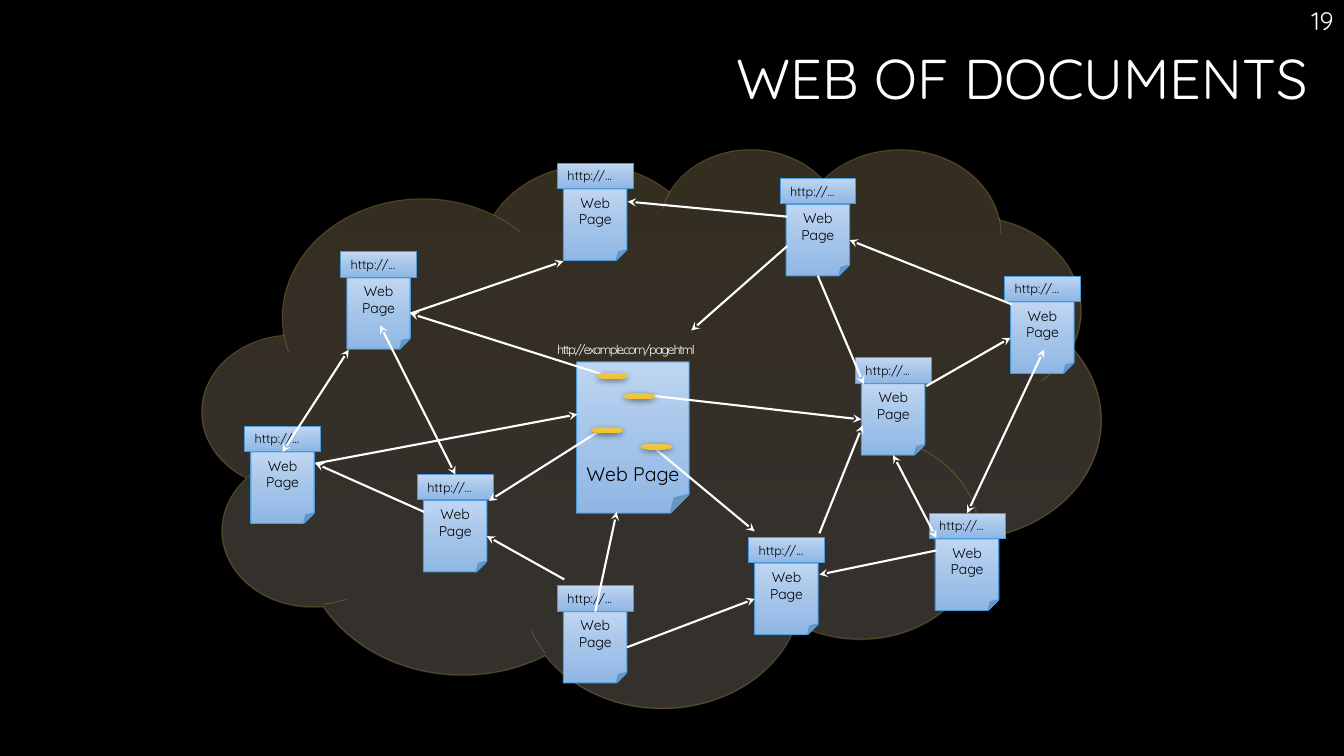
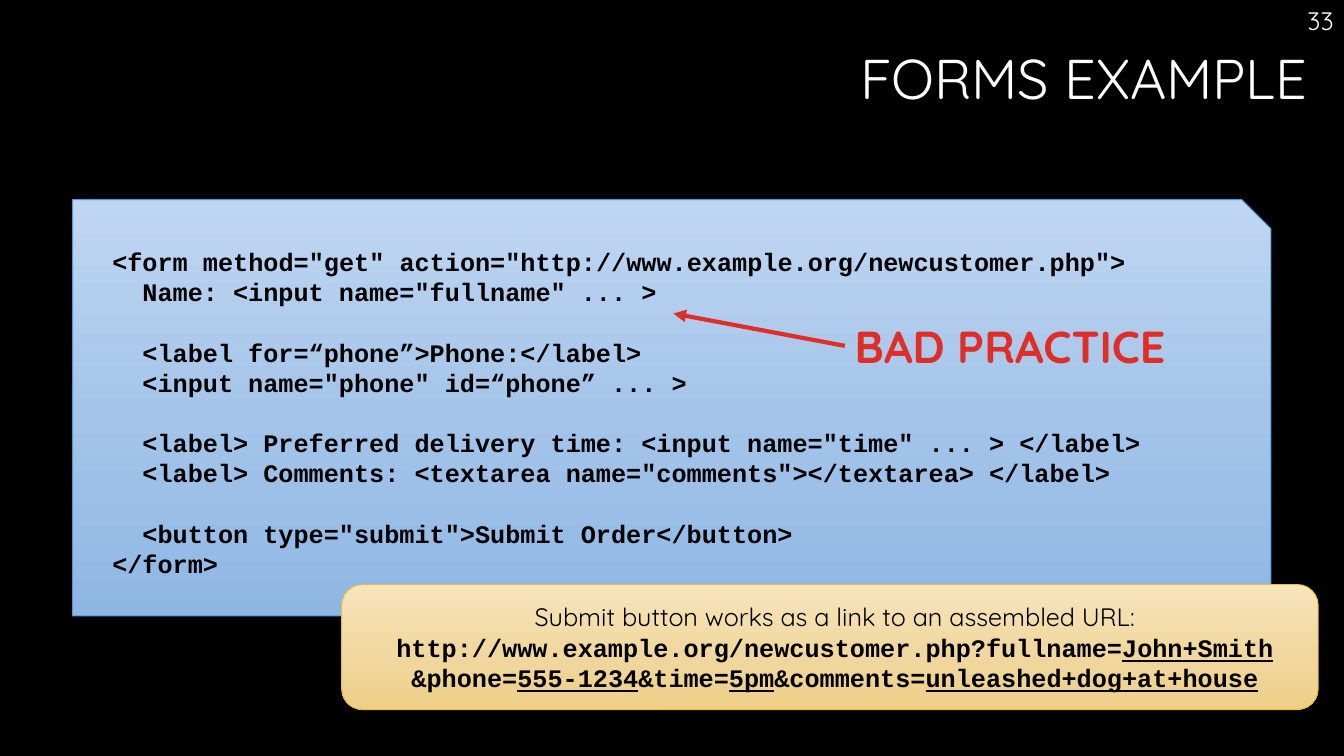
from lxml import etree
from pptx import Presentation
from pptx.dml.color import RGBColor
from pptx.enum.shapes import MSO_CONNECTOR, MSO_SHAPE
from pptx.enum.text import MSO_ANCHOR, PP_ALIGN
from pptx.oxml.ns import qn
from pptx.util import Cm, Pt

LEFT, CENTER, RIGHT = PP_ALIGN.LEFT, PP_ALIGN.CENTER, PP_ALIGN.RIGHT
ANCHOR_TOP, ANCHOR_MIDDLE, ANCHOR_BOTTOM = MSO_ANCHOR.TOP, MSO_ANCHOR.MIDDLE, MSO_ANCHOR.BOTTOM
CLOUD, FOLDED, RECTANGLE = MSO_SHAPE.CLOUD, MSO_SHAPE.FOLDED_CORNER, MSO_SHAPE.RECTANGLE
OVAL, SNIPPED, ROUNDED = MSO_SHAPE.OVAL, MSO_SHAPE.SNIP_1_RECTANGLE, MSO_SHAPE.ROUNDED_RECTANGLE
STRAIGHT = MSO_CONNECTOR.STRAIGHT

# Shared look
SANS, MONO = "Quicksand", "Courier New"
BLACK, WHITE, RED = "000000", "FFFFFF", "DF2E28"
BLUE_LINE, GOLD_LINE = "4A9BDC", "E9BF35"
BLUE = [(0, "BFD6F2"), (52, "A4C4E9"), (100, "8FB7E4")]
SAND = [(0, "F8E5BD"), (52, "F1D8A0"), (100, "EECF89")]
GOLD = [(0, "EBC659"), (78, "F2C42C")]
MIST = [(0, "FFDF9D"), (65, "FFEFD2"), (100, "FFF4E0")]
TITLE_BOX = (0.66, 1.17, 32.54, 3.58)
NUMBER_BOX = (26.54, 0, 7.32, 1.02)

# Web of documents: boxes in centimetres
CLOUD_BOX = (5.11, 3.73, 22.63, 14.07)
MAIN_PAGE_BOX = (14.53, 9.12, 2.84, 3.81)
MAIN_URL_BOX = (13.79, 8.48, 4.32, 0.64)
URL_SIZE = (1.91, 0.64)
PAGE_SIZE = (1.6, 1.8)
PAGE_OFFSET = (0.15, 0.65)
MARK_SIZE = (0.79, 0.15)
MARKS = [(15.04, 9.4), (15.72, 9.91), (14.91, 10.77), (16.15, 11.18)]
PAGES = {
    "upper left": (8.59, 6.35),
    "left": (6.17, 10.74),
    "lower left": (10.52, 11.96),
    "upper right": (19.66, 4.5),
    "far right": (25.32, 6.96),
    "right": (21.56, 9.02),
    "bottom right": (18.87, 13.54),
    "bottom": (14.05, 14.76),
    "top": (14.05, 4.11),
    "lower right": (23.42, 12.93),
}

# An end is a point, or a page part with one of its sides
TOP_SIDE, LEFT_SIDE, BOTTOM_SIDE, RIGHT_SIDE = range(4)
LINKS = [
    ((15.14, 9.42), ("upper left", "page", RIGHT_SIDE)),
    ((15.04, 10.9), (12.32, 12.62)),
    ((16.54, 11.33), (19.02, 13.39)),
    ((16.51, 9.98), ("right", "page", LEFT_SIDE)),
    ((23.34, 9.73), ("far right", "page", LEFT_SIDE)),
    ((25.5, 7.67), ("upper right", "page", RIGHT_SIDE)),
    (("upper right", "page", BOTTOM_SIDE), (21.77, 9.68)),
    ((19.84, 6.2), (17.42, 8.33)),
    ((19.84, 5.46), (15.82, 5.08)),
    ((23.6, 13.87), (20.65, 14.48)),
    ((20.65, 13.44), (21.74, 10.72)),
    (("bottom", "page", RIGHT_SIDE), ("bottom right", "page", LEFT_SIDE)),
    (("bottom", "page", TOP_SIDE), (15.54, 12.9)),
    ((14.22, 14.6), ("lower left", "page", RIGHT_SIDE)),
    ((10.69, 12.9), (7.95, 11.68)),
    ((7.95, 11.68), (14.55, 10.44)),
    (("upper left", "page", RIGHT_SIDE), (14.2, 6.58)),
]
TWO_WAY_LINKS = [
    (("right", "page", BOTTOM_SIDE), (23.6, 13.56)),
    (("lower right", "url", TOP_SIDE), (26.31, 8.81)),
    (("lower left", "url", TOP_SIDE), (9.58, 8.2)),
    (("left", "page", TOP_SIDE), (8.79, 8.81)),
]

# Forms example: indent level, blank line above, text
CODE_BOX = (1.83, 5.03, 30.2, 10.49)
CODE_INDENT, CODE_GAP = Cm(0.76), Pt(21.5)
CODE = [
    (0, False, '<form method="get" action="http://www.example.org/newcustomer.php">'),
    (1, False, 'Name: <input name="fullname" ... >'),
    (1, True, "<label for=“phone”>Phone:</label>"),
    (1, False, '<input name="phone" id=“phone” ... >'),
    (1, True, '<label> Preferred delivery time: <input name="time" ... > </label>'),
    (1, False, '<label> Comments: <textarea name="comments"></textarea> </label>'),
    (1, True, '<button type="submit">Submit Order</button>'),
    (0, False, "</form>"),
]
RESULT_BOX = (8.61, 14.73, 24.61, 3.15)
RESULT_INTRO = "Submit button works as a link to an assembled URL:"
RESULT_LINES = [  # (text, underlined)
    [("http://www.example.org/newcustomer.php?fullname=", False), ("John+Smith", True)],
    [("&phone=", False), ("555-1234", True), ("&time=", False), ("5pm", True),
     ("&comments=", False), ("unleashed+dog+at+house", True)],
]
WARNING_BOX = (21.29, 7.9, 9.09, 1.63)
WARNING_TARGET = (16.97, 7.9)


def color(hex_string):
    return RGBColor.from_string(hex_string)


def lengths(values):
    return [Cm(value) for value in values]


def add_alpha(color_element, percent):
    etree.SubElement(color_element, qn("a:alpha"), val=str(percent * 1000))


def fill_gradient(shape, stops, alpha=None):
    shape.fill.gradient()
    shape.fill.gradient_angle = 270
    stop_list = shape._element.spPr.find(qn("a:gradFill")).find(qn("a:gsLst"))
    for old_stop in list(stop_list):
        stop_list.remove(old_stop)
    for position, hex_string in stops:
        stop = etree.SubElement(stop_list, qn("a:gs"), pos=str(position * 1000))
        stop_color = etree.SubElement(stop, qn("a:srgbClr"), val=hex_string)
        if alpha:
            add_alpha(stop_color, alpha)


def add_box(slide, kind, box, stops, line=None, alpha=None):
    shape = slide.shapes.add_shape(kind, *lengths(box))
    shape.shadow.inherit = False
    fill_gradient(shape, stops, alpha)
    if line:
        shape.line.color.rgb = color(line)
        shape.line.width = Pt(0.75)
    else:
        shape.line.fill.background()
    return shape


def set_frame(shape, anchor=ANCHOR_TOP, insets=(0.25, 0.13, 0.25, 0.13)):
    frame = shape.text_frame
    frame.word_wrap = True
    frame.vertical_anchor = anchor
    (frame.margin_left, frame.margin_top,
     frame.margin_right, frame.margin_bottom) = lengths(insets)
    return frame


def add_run(paragraph, text, size, hex_string=BLACK, font=SANS, bold=False, underline=False):
    run = paragraph.add_run()
    run.text = text
    run.font.name = font
    run.font.size = Pt(size)
    run.font.bold = bold
    run.font.underline = underline
    run.font.color.rgb = color(hex_string)
    return run


def write(shape, text, size, hex_string=BLACK, align=LEFT, bold=False, **frame_options):
    paragraph = set_frame(shape, **frame_options).paragraphs[0]
    paragraph.alignment = align
    return add_run(paragraph, text, size, hex_string, bold=bold)


def add_label(slide, box, text, size, hex_string=WHITE, align=LEFT, bold=False):
    label = slide.shapes.add_textbox(*lengths(box))
    return label, write(label, text, size, hex_string, align, bold)


def add_arrow(slide, start, end, hex_string, width, tail, head=None):
    """Each end is a point in centimetres or a (shape, side) pair."""
    points = [(0, 0) if hasattr(place[0], "shape_id") else lengths(place)
              for place in (start, end)]
    arrow = slide.shapes.add_connector(STRAIGHT, *points[0], *points[1])
    for place, connect in ((start, arrow.begin_connect), (end, arrow.end_connect)):
        if hasattr(place[0], "shape_id"):
            connect(*place)
    arrow.line.color.rgb = color(hex_string)
    arrow.line.width = Pt(width)
    properties = arrow._element.spPr
    line = properties.find(qn("a:ln"))
    if head:
        etree.SubElement(line, qn("a:headEnd"), type=head)
    etree.SubElement(line, qn("a:tailEnd"), type=tail)
    etree.SubElement(properties, qn("a:effectLst"))


def add_slide(presentation, title, number):
    slide = presentation.slides.add_slide(presentation.slide_layouts[5])
    shape = slide.shapes.title
    shape.left, shape.top, shape.width, shape.height = lengths(TITLE_BOX)
    write(shape, title, 40, WHITE, RIGHT)
    shape.text_frame.paragraphs[0].line_spacing = 0.9
    add_label(slide, NUMBER_BOX, number, 18, align=RIGHT)
    return slide


def add_web_page(slide, left, top):
    page_box = (left + PAGE_OFFSET[0], top + PAGE_OFFSET[1], *PAGE_SIZE)
    page = add_box(slide, FOLDED, page_box, BLUE, BLUE_LINE)
    write(page, "Web Page", 10, align=CENTER)
    url = add_box(slide, RECTANGLE, (left, top, *URL_SIZE), BLUE, BLUE_LINE)
    write(url, "http://...", 9, insets=(0.25, 0.13, 0, 0.13))
    return {"page": page, "url": url}


def add_mark(slide, position):
    mark = add_box(slide, OVAL, (*position, *MARK_SIZE), GOLD)
    effects = mark._element.spPr.find(qn("a:effectLst"))
    shadow = etree.SubElement(effects, qn("a:outerShdw"), blurRad=str(Pt(4.5)),
                              dist=str(Pt(1.5)), dir="5400000", rotWithShape="0")
    add_alpha(etree.SubElement(shadow, qn("a:srgbClr"), val=BLACK), 48)


def build_web(presentation):
    slide = add_slide(presentation, "WEB OF DOCUMENTS", "19")
    cloud = add_box(slide, CLOUD, CLOUD_BOX, MIST, GOLD_LINE, alpha=20)
    add_alpha(next(cloud._element.spPr.find(qn("a:ln")).iter(qn("a:srgbClr"))), 21)

    # Central page with its address
    main_page = add_box(slide, FOLDED, MAIN_PAGE_BOX, BLUE, BLUE_LINE)
    write(main_page, "Web Page", 14, align=CENTER, anchor=ANCHOR_BOTTOM,
          insets=(0.1, 0.13, 0.1, 0.23))
    address = add_label(slide, MAIN_URL_BOX, "http://example.com/page.html", 9)[1]
    address.font._element.set("spc", "-110")

    # Surrounding pages and the links between them
    pages = {name: add_web_page(slide, *position) for name, position in PAGES.items()}

    def resolve(end):
        return (pages[end[0]][end[1]], end[2]) if len(end) == 3 else end

    for links, head in ((LINKS, None), (TWO_WAY_LINKS, "stealth")):
        for start, end in links:
            add_arrow(slide, resolve(start), resolve(end), WHITE, 1.5, "stealth", head)
    for position in MARKS:
        add_mark(slide, position)


def build_form(presentation):
    slide = add_slide(presentation, "FORMS EXAMPLE", "33")

    # Code listing
    panel = add_box(slide, SNIPPED, CODE_BOX, BLUE, BLUE_LINE)
    panel.adjustments[0] = 0.07
    frame = set_frame(panel, ANCHOR_MIDDLE, (1, 0, 0.25, 0.13))
    for index, (level, gap, text) in enumerate(CODE):
        paragraph = frame.add_paragraph() if index else frame.paragraphs[0]
        paragraph.alignment = LEFT
        paragraph._p.get_or_add_pPr().set("marL", str(level * CODE_INDENT))
        if gap:
            paragraph.space_before = CODE_GAP
        add_run(paragraph, text, 18, font=MONO, bold=True)

    # Resulting address
    result = add_box(slide, ROUNDED, RESULT_BOX, SAND, GOLD_LINE)
    write(result, RESULT_INTRO, 18, align=CENTER, anchor=ANCHOR_MIDDLE,
          insets=(0.5, 0.13, 0.25, 0.13))
    paragraph = result.text_frame.add_paragraph()
    paragraph.alignment = CENTER
    for index, pieces in enumerate(RESULT_LINES):
        if index:
            paragraph.add_line_break()
        for text, underline in pieces:
            add_run(paragraph, text, 18, font=MONO, bold=True, underline=underline)

    # Warning
    warning = add_label(slide, WARNING_BOX, "BAD PRACTICE", 32, RED, bold=True)[0]
    add_arrow(slide, (warning, LEFT_SIDE), WARNING_TARGET, RED, 3, "triangle")


def main():
    presentation = Presentation()
    presentation.slide_width, presentation.slide_height = Cm(33.87), Cm(19.05)
    background = presentation.slide_master.background.fill
    background.solid()
    background.fore_color.rgb = color(BLACK)
    build_web(presentation)
    build_form(presentation)
    presentation.save("out.pptx")


if __name__ == "__main__":
    main()
